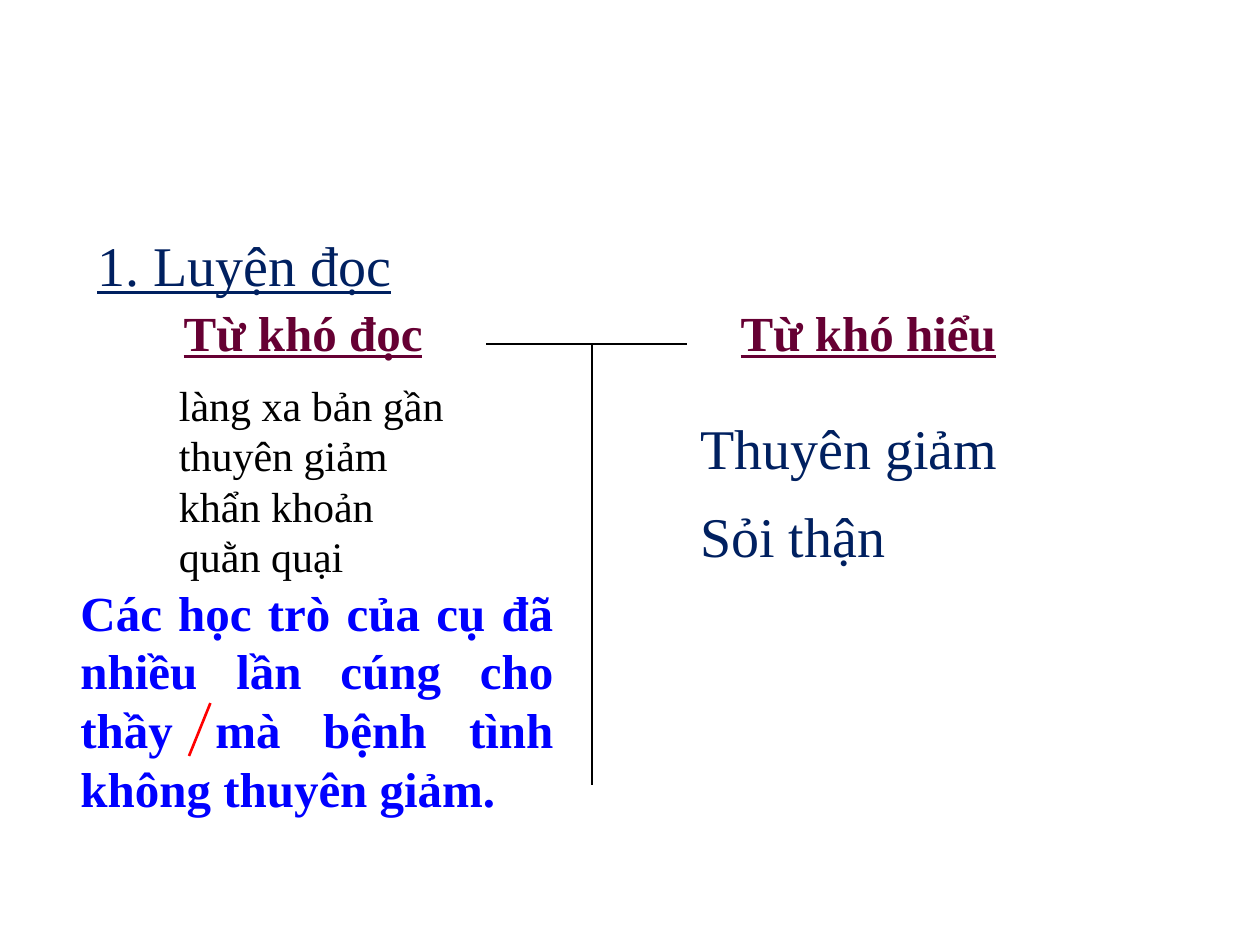
from dataclasses import dataclass

from lxml.etree import SubElement
from pptx import Presentation
from pptx.dml.color import RGBColor
from pptx.enum.shapes import MSO_CONNECTOR
from pptx.enum.text import MSO_ANCHOR, MSO_AUTO_SIZE, PP_ALIGN
from pptx.oxml.ns import qn
from pptx.util import Inches, Pt

COLS, ROWS = 100, 75
FONT = "Times New Roman"
COLORS = {
    "navy": "002060",
    "plum": "660033",
    "blue": "0000FF",
    "black": "000000",
    "red": "FF0000",
}

prs = Presentation()
prs.slide_width, prs.slide_height = Inches(10), Inches(7.5)


@dataclass
class Label:
    lines: list[str]
    col: float
    row: float
    cols: float
    rows: float
    size: int
    color: str
    bold: bool = False
    underline: bool = False
    align: PP_ALIGN = PP_ALIGN.LEFT


@dataclass
class Rule:
    start: tuple[float, float]
    end: tuple[float, float]
    color: str = "black"
    width: float = 1


def x(col: float) -> int:
    return round(prs.slide_width * col / COLS)


def y(row: float) -> int:
    return round(prs.slide_height * row / ROWS)


def fill_label(sp, label: Label) -> None:
    sp.left, sp.top = x(label.col), y(label.row)
    sp.width, sp.height = x(label.cols), y(label.rows)
    tf = sp.text_frame
    tf.word_wrap = True
    tf.auto_size = MSO_AUTO_SIZE.SHAPE_TO_FIT_TEXT
    tf.vertical_anchor = MSO_ANCHOR.TOP
    tf.text = "\n".join(label.lines)
    for p in tf.paragraphs:
        p.alignment = label.align
        p.space_before = Pt(0)
        p.font.name = FONT
        p.font.size = Pt(label.size)
        p.font.bold = label.bold
        p.font.underline = label.underline
        p.font.color.rgb = RGBColor.from_string(COLORS[label.color])


def remove_bullets(sp) -> None:
    for p in sp.text_frame.paragraphs:
        pPr = p._p.get_or_add_pPr()
        pPr.set("marL", "0")
        pPr.set("indent", "0")
        pPr.insert_element_before(
            pPr.makeelement(qn("a:buNone")), "a:tabLst", "a:defRPr", "a:extLst"
        )


def draw_rule(s, rule: Rule) -> None:
    (x1, y1), (x2, y2) = rule.start, rule.end
    line = s.shapes.add_connector(MSO_CONNECTOR.STRAIGHT, x(x1), y(y1), x(x2), y(y2))
    line.line.color.rgb = RGBColor.from_string(COLORS[rule.color])
    line.line.width = Pt(rule.width)
    SubElement(line._element.spPr, qn("a:effectLst"))


HEADING = Label(["1. Luyện đọc"], 6.7, 17.8, 25.8, 6.4, 32, "navy", underline=True)
HARD_TO_READ = Label(
    ["làng xa bản gần", "thuyên giảm", "khẩn khoản", "quằn quại"],
    13.2, 29.6, 30, 17.2, 24, "black",
)
LABELS = [
    Label(["Từ khó đọc"], 13.6, 23.5, 27.5, 5.7, 28, "plum", True, True),
    Label(["Từ khó hiểu"], 57.8, 23.5, 34.2, 5.7, 28, "plum", True, True),
    Label(["Thuyên giảm"], 54.6, 32.3, 29.2, 6.4, 32, "navy"),
    Label(["Sỏi thận"], 54.6, 39.3, 16.7, 6.4, 32, "navy"),
    Label(
        ["Các học trò của cụ đã nhiều lần cúng cho thầy mà bệnh tình không thuyên giảm."],
        5.4, 45.7, 39.5, 19.9, 28, "blue", True, align=PP_ALIGN.JUSTIFY,
    ),
]
RULES = [
    Rule((47, 27.3), (47, 62.3)),
    Rule((38.6, 27.3), (54.5, 27.3)),
    Rule((16.7, 55.8), (15, 60), "red", 1.5),
]

s = prs.slides.add_slide(prs.slide_layouts[1])
fill_label(s.shapes.title, HEADING)
body = s.placeholders[1]
fill_label(body, HARD_TO_READ)
remove_bullets(body)
for label in LABELS:
    fill_label(s.shapes.add_textbox(0, 0, 0, 0), label)
for rule in RULES:
    draw_rule(s, rule)

prs.save("out.pptx")
